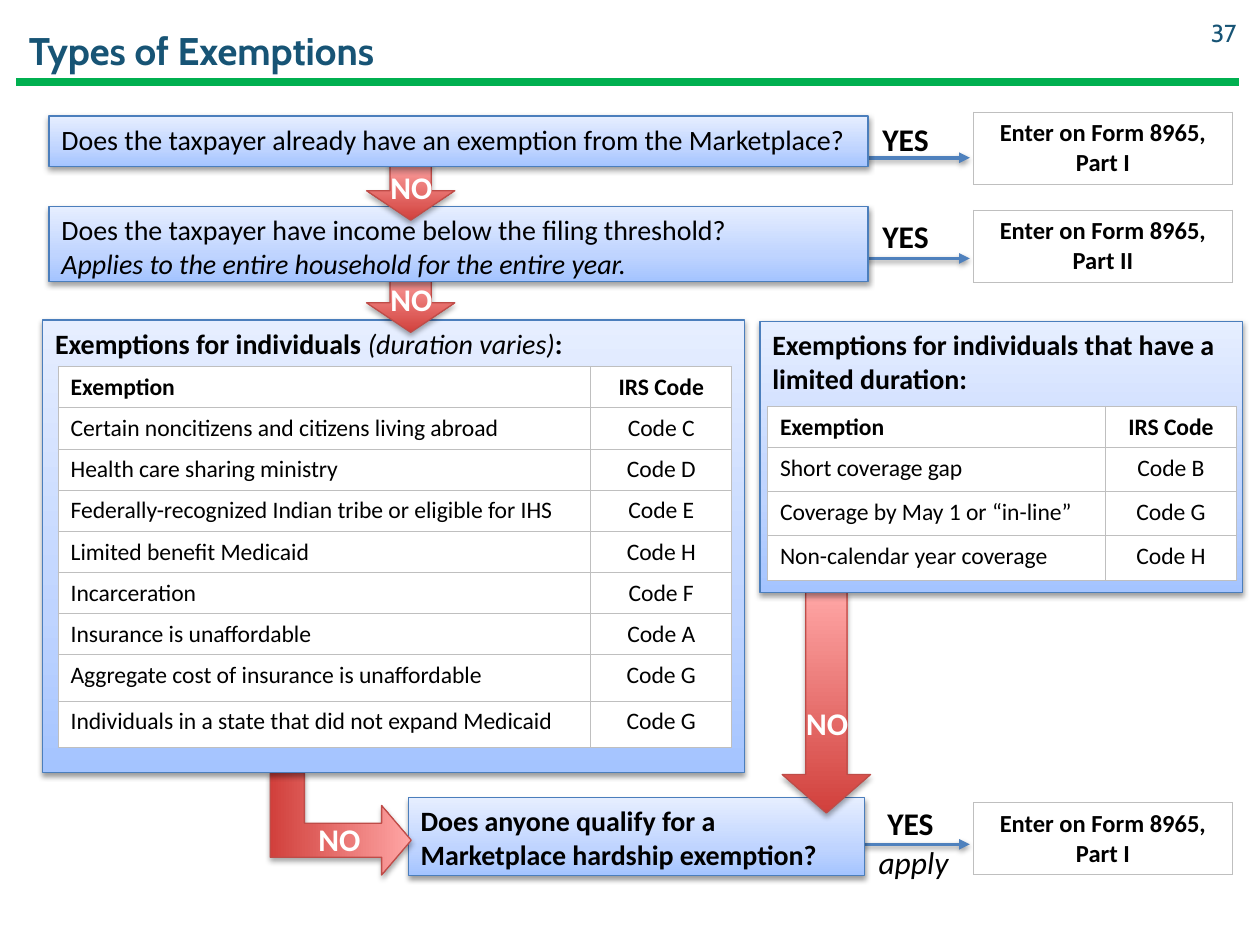
from lxml import etree
from pptx import Presentation
from pptx import util as u
from pptx.dml.color import RGBColor
from pptx.enum import shapes, text
from pptx.oxml import ns

COLORS = {
    "title": "175475", "rule": "00B050", "arrow": "4F81BD", "box_line": "4B7EBC",
    "no_line": "BF4C48", "grid": "BFBFBF", "black": "000000", "white": "FFFFFF",
}
BLUE_STOPS = [(0, "A4C4FF"), (35, "BFD4FF"), (100, "E6EEFF")]
RED_STOPS = [(0, "D1403C"), (100, "FFA6A5")]
LEFT, CENTER, RIGHT = text.PP_ALIGN.LEFT, text.PP_ALIGN.CENTER, text.PP_ALIGN.RIGHT
TOP, MIDDLE = text.MSO_ANCHOR.TOP, text.MSO_ANCHOR.MIDDLE

CODES = [
    ("Exemption", "IRS Code"),
    ("Certain noncitizens and citizens living abroad", "Code C"),
    ("Health care sharing ministry", "Code D"),
    ("Federally-recognized Indian tribe or eligible for IHS", "Code E"),
    ("Limited benefit Medicaid", "Code H"),
    ("Incarceration", "Code F"),
    ("Insurance is unaffordable", "Code A"),
    ("Aggregate cost of insurance is unaffordable", "Code G"),
    ("Individuals in a state that did not expand Medicaid", "Code G"),
]
LIMITED_CODES = [
    ("Exemption", "IRS Code"),
    ("Short coverage gap", "Code B"),
    ("Coverage by May 1 or “in-line”", "Code G"),
    ("Non-calendar year coverage", "Code H"),
]


def cm(*lengths):
    return [u.Cm(length) for length in lengths]


def rgb(name):
    return RGBColor.from_string(COLORS[name])


def add_xml(parent, tag, **attributes):
    return etree.SubElement(parent, ns.qn(tag), attributes)


def write(frame, paragraphs, size, color="black", align=LEFT, anchor=TOP, font="Calibri"):
    """Each paragraph is a list of (words, style); style holds b and/or i."""
    frame.vertical_anchor = anchor
    for index, runs in enumerate(paragraphs):
        para = frame.paragraphs[0] if index == 0 else frame.add_paragraph()
        para.alignment = align
        for words, style in runs:
            span = para.add_run()
            span.text = words
            span.font.name = font
            span.font.size = u.Pt(size)
            span.font.bold = "b" in style
            span.font.italic = "i" in style
            span.font.color.rgb = rgb(color)


def add_shadow(properties, alpha, distance):
    effects = properties.find(ns.qn("a:effectLst"))
    if effects is None:
        effects = add_xml(properties, "a:effectLst")
    shadow = add_xml(effects, "a:outerShdw", blurRad="40000", dist=str(distance),
                     dir="5400000", rotWithShape="0")
    color = add_xml(shadow, "a:srgbClr", val=COLORS["black"])
    add_xml(color, "a:alpha", val=str(alpha * 1000))


def style_shape(shape, stops, line, alpha, distance):
    shape.fill.gradient()
    shape.fill.gradient_angle = 90
    stop_list = shape.element.spPr.find(".//" + ns.qn("a:gsLst"))
    for stop in list(stop_list):
        stop_list.remove(stop)
    for position, color in stops:
        stop = add_xml(stop_list, "a:gs", pos=str(position * 1000))
        add_xml(stop, "a:srgbClr", val=color)
    shape.line.color.rgb = rgb(line)
    shape.line.width = u.Pt(0.75)
    shape.shadow.inherit = False
    add_shadow(shape.element.spPr, alpha, distance)


def add_question(page, place, paragraphs):
    box = page.shapes.add_shape(shapes.MSO_SHAPE.RECTANGLE, *cm(*place))
    style_shape(box, BLUE_STOPS, "box_line", 38, 20000)
    box.text_frame.word_wrap = True
    write(box.text_frame, paragraphs, 16)


def add_label(parent, place, words, style, size=18, color="black", align=CENTER,
              font="Calibri"):
    box = parent.shapes.add_textbox(*cm(*place))
    box.text_frame.word_wrap = False
    write(box.text_frame, [[(words, style)]], size, color, align, MIDDLE, font)


def add_no_arrow(page, kind, place, adjustments, label_place, rotation=0):
    group = page.shapes.add_group_shape()
    arrow = group.shapes.add_shape(kind, *cm(*place))
    arrow.rotation = rotation
    for index, value in enumerate(adjustments):
        arrow.adjustments[index] = value
    style_shape(arrow, RED_STOPS, "no_line", 35, 23000)
    add_label(group, label_place, "NO", "b", color="white")


def add_line(page, left, right, y, color, width):
    line = page.shapes.add_connector(shapes.MSO_CONNECTOR.STRAIGHT, *cm(left, y, right, y))
    line.line.color.rgb = rgb(color)
    line.line.width = u.Pt(width)
    add_xml(line.element.spPr, "a:effectLst")
    return line


def add_yes_arrow(page, y):
    line = add_line(page, 16.5, 19.55, y, "arrow", 2)
    add_xml(line.line._get_or_add_ln(), "a:tailEnd", type="triangle")
    add_shadow(line.element.spPr, 38, 20000)


def style_cell(cell):
    properties = cell._tc.get_or_add_tcPr()
    for side in ("a:lnL", "a:lnR", "a:lnT", "a:lnB"):
        border = add_xml(properties, side, w=str(u.Pt(0.5)))
        add_xml(add_xml(border, "a:solidFill"), "a:srgbClr", val=COLORS["grid"])
    cell.fill.solid()
    cell.fill.fore_color.rgb = rgb("white")


def add_grid(page, left, top, widths, heights, rows, size=13.5):
    """The first row is a bold heading; the last column is centred."""
    frame = page.shapes.add_table(len(rows), len(widths),
                                  *cm(left, top, sum(widths), sum(heights)))
    table = frame.table
    table.first_row = table.horz_banding = False
    for column, width in zip(table.columns, widths):
        column.width = u.Cm(width)
    for r, (row, height) in enumerate(zip(rows, heights)):
        table.rows[r].height = u.Cm(height)
        for c, words in enumerate(row):
            cell = table.cell(r, c)
            style_cell(cell)
            write(cell.text_frame, [[(words, "" if r else "b")]], size,
                  align=CENTER if c == len(row) - 1 else LEFT)
            cell.vertical_anchor = TOP if r else MIDDLE


def add_form(page, top, part):
    add_grid(page, 19.63, top, [5.21], [1.45], [[f"Enter on Form 8965, {part}"]], 14)


def main():
    deck = Presentation()
    deck.slide_width, deck.slide_height = cm(25.4, 19.05)
    page = deck.slides.add_slide(deck.slide_layouts[5])
    down = shapes.MSO_SHAPE.DOWN_ARROW
    bent = shapes.MSO_SHAPE.BENT_UP_ARROW

    # Heading
    add_line(page, 0.33, 24.97, 1.65, "rule", 4.75)
    title = page.shapes.title
    title.left, title.top, title.width, title.height = cm(0.33, 0.28, 22.86, 1.45)
    write(title.text_frame, [[("Types of Exemptions", "b")]], 22, "title",
          anchor=MIDDLE, font="Cabin")
    add_label(page, (23.88, 0.15, 1.3, 1.02), "37", "", 14, "title", RIGHT, "Cabin")

    # Arrows to the forms, behind the question boxes
    for y in (3.18, 5.21, 17.02):
        add_yes_arrow(page, y)

    # Questions and NO arrows, from the bottom step to the top one
    add_question(page, (8.23, 16.08, 9.2, 1.57),
                 [[("Does anyone qualify for a Marketplace hardship exemption?", "b")]])
    add_no_arrow(page, bent, (5.84, 15.19, 2.06, 2.84), (0.333, 0.34, 0.29),
                 (6.12, 16.46, 1.45, 0.89), rotation=90)
    add_question(page, (0.86, 6.45, 14.15, 9.12),
                 [[("Exemptions for individuals ", "b"), ("(duration varies)", "i"),
                   (":", "b")]])
    add_no_arrow(page, down, (7.39, 5.51, 1.78, 1.19), (0.468, 0.5), (7.57, 5.59, 1.45, 0.89))
    add_question(page, (0.99, 4.17, 16.51, 1.5),
                 [[("Does the taxpayer have income below the filing threshold?", "")],
                  [("Applies to the entire household for the entire year.", "i")]])
    add_no_arrow(page, down, (7.39, 3.25, 1.78, 1.19), (0.468, 0.5), (7.57, 3.33, 1.45, 0.89))
    add_no_arrow(page, down, (15.77, 11.94, 1.78, 4.45), (0.468, 0.435),
                 (15.95, 13.89, 1.45, 1.35))
    add_question(page, (15.32, 6.48, 9.73, 5.46),
                 [[("Exemptions for individuals that have a limited duration:", "b")]])
    add_question(page, (0.99, 2.34, 16.51, 1.02),
                 [[("Does the taxpayer already have an exemption from the Marketplace?", "")]])

    # Code tables
    add_grid(page, 1.17, 7.39, [10.74, 2.84], [0.83] * 7 + [0.93] * 2, CODES)
    add_grid(page, 15.47, 8.19, [6.81, 2.65], [0.83] + [0.89] * 3, LIMITED_CODES)

    # YES labels and the forms they lead to
    for left, top, form_top, part in ((17.53, 2.36, 2.26, "Part I"),
                                      (17.53, 4.32, 4.24, "Part II"),
                                      (17.63, 16.15, 16.18, "Part I")):
        add_label(page, (left, top, 1.45, 0.89), "YES", "b")
        add_form(page, form_top, part)
    add_label(page, (17.27, 16.92, 2.29, 0.91), "apply", "i")

    deck.save("out.pptx")


if __name__ == "__main__":
    main()
